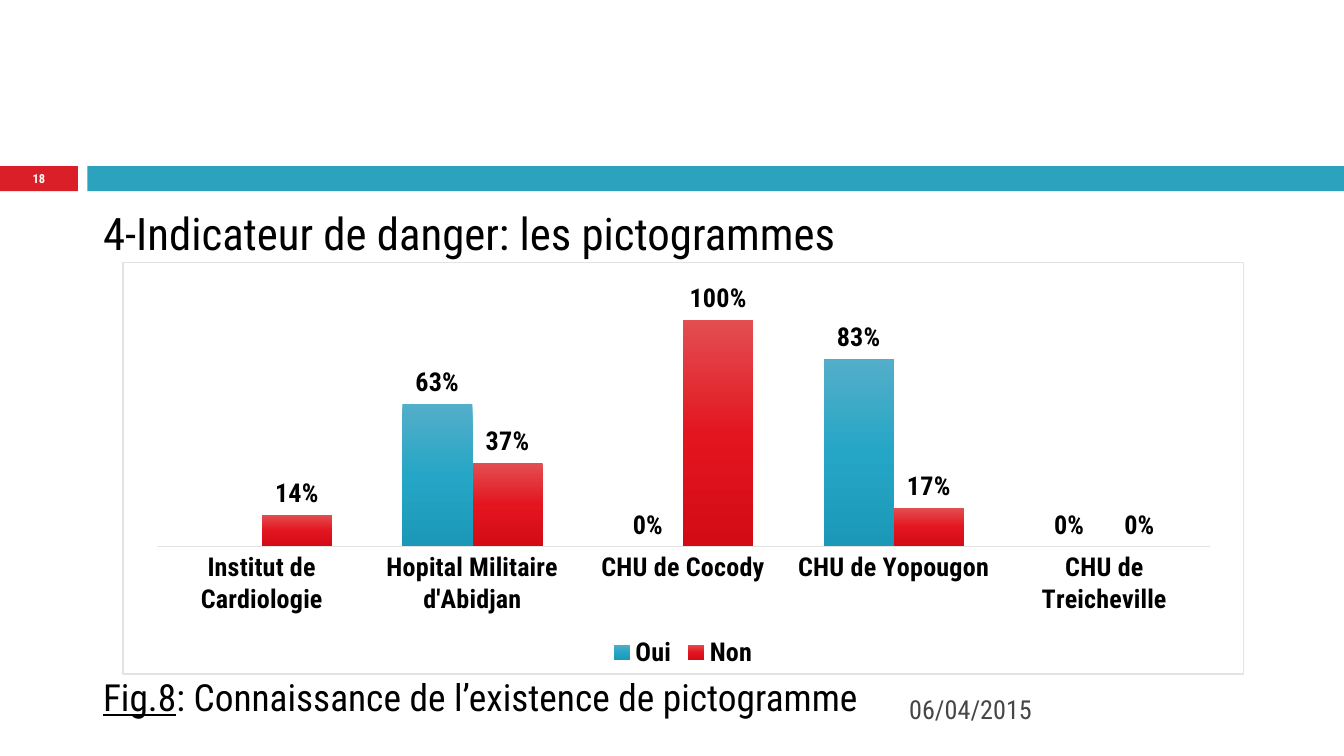
import copy

import lxml.etree
import pptx
import pptx.chart.data
import pptx.dml.color
import pptx.enum.chart
import pptx.enum.shapes
import pptx.enum.text
import pptx.oxml
import pptx.oxml.ns
import pptx.util

Pt = pptx.util.Pt
qn = pptx.oxml.ns.qn
RGB = pptx.dml.color.RGBColor.from_string
ALIGN = pptx.enum.text.PP_ALIGN
ANCHOR = pptx.enum.text.MSO_ANCHOR

THEME = {
    "font": "Roboto Condensed",
    "red": "DA1F28", "blue": "2DA2BF", "black": "000000",
    "white": "FFFFFF", "grey": "464646", "border": "E3E3E3",
    "yes": ["53AEC9", "26A6C6", "1B98B7"],
    "no": ["E34E51", "E31620", "D20B15"],
    "heading": 24, "caption": 20, "small": 14, "number": 6.7,
}


def add_run(paragraph, text, size, color, bold=False, underline=False):
    run = paragraph.add_run()
    run.text = text
    run.font.name = THEME["font"]
    run.font.size = Pt(size)
    run.font.color.rgb = RGB(color)
    run.font.bold = bold
    run.font.underline = underline


presentation = pptx.Presentation()
presentation.slide_width = Pt(720)
presentation.slide_height = Pt(405)
slide = presentation.slides.add_slide(presentation.slide_layouts[1])
title = slide.shapes.title._element
title.getparent().remove(title)

# Header band
for left, width, color in [(0, 41.76, "red"), (46.8, 673.2, "blue")]:
    band = slide.shapes.add_shape(
        pptx.enum.shapes.MSO_SHAPE.RECTANGLE, Pt(left), Pt(89), Pt(width), Pt(13.5))
    band.shadow.inherit = False
    band.fill.solid()
    band.fill.fore_color.rgb = RGB(THEME[color])
    band.line.fill.background()

# Date and slide number
for text, box, size, color, bold, alignment in [
    ("06/04/2015", (480, 369, 210, 21.6), "small", "grey", False, ALIGN.LEFT),
    ("18", (0, 88.6, 41.76, 14.4), "number", "white", True, ALIGN.CENTER),
]:
    text_box = slide.shapes.add_textbox(*[Pt(length) for length in box])
    frame = text_box.text_frame
    frame.word_wrap = True
    frame.vertical_anchor = ANCHOR.MIDDLE
    frame.margin_top = frame.margin_bottom = 0
    paragraph = frame.paragraphs[0]
    paragraph.alignment = alignment
    add_run(paragraph, text, THEME[size], THEME[color], bold)

# Heading above the chart and caption below it
body = slide.placeholders[1]
body.left, body.top, body.width, body.height = Pt(48), Pt(106.56), Pt(642), Pt(284.4)
frame = body.text_frame
frame.auto_size = pptx.enum.text.MSO_AUTO_SIZE.NONE
frame.vertical_anchor = ANCHOR.TOP
heading = frame.paragraphs[0]
caption = frame.add_paragraph()
add_run(heading, "4-Indicateur de danger: les pictogrammes", THEME["heading"], THEME["black"])
add_run(caption, "Fig.8", THEME["caption"], THEME["black"], underline=True)
add_run(caption, ": Connaissance de l’existence de pictogramme", THEME["caption"], THEME["black"])
for paragraph, space_before in [(heading, 0), (caption, 222)]:
    paragraph.space_before = Pt(space_before)
    properties = paragraph._p.get_or_add_pPr()
    properties.set("marL", "0")
    properties.set("indent", "0")
    lxml.etree.SubElement(properties, qn("a:buNone"))

# Chart
data = pptx.chart.data.CategoryChartData(number_format="0%")
data.categories = ["Institut de Cardiologie", "Hopital Militaire d'Abidjan",
                   "CHU de Cocody", "CHU de Yopougon", "CHU de Treicheville"]
data.add_series("Oui", [None, 0.63, 0, 0.83, 0])
data.add_series("Non", [0.14, 0.37, 1, 0.17, 0])
chart = slide.shapes.add_chart(
    pptx.enum.chart.XL_CHART_TYPE.COLUMN_CLUSTERED,
    Pt(65.5), Pt(140.4), Pt(601), Pt(221), data).chart
chart.has_title = False
chart.font.name = THEME["font"]
chart.font.size = Pt(THEME["small"])
chart.font.bold = True
chart.font.color.rgb = RGB(THEME["black"])
chart.has_legend = True
chart.legend.position = pptx.enum.chart.XL_LEGEND_POSITION.BOTTOM
chart.legend.include_in_layout = False

category_axis = chart.category_axis
category_axis.major_tick_mark = pptx.enum.chart.XL_TICK_MARK.NONE
category_axis.format.line.color.rgb = RGB(THEME["border"])
category_axis.format.line.width = Pt(0.75)
value_axis = chart.value_axis
value_axis.minimum_scale = 0
value_axis.maximum_scale = 1.2
value_axis.has_major_gridlines = False
value_axis.visible = False

plot = chart.plots[0]
plot.gap_width = 100
plot.overlap = 0
plot.vary_by_categories = False
for series, colors in zip(plot.series, [THEME["yes"], THEME["no"]]):
    fill = series.format.fill
    fill.gradient()
    fill.gradient_angle = 270
    stop_list = series._element.find(".//" + qn("a:gsLst"))
    stop_list.insert(1, copy.deepcopy(stop_list[0]))
    for stop, color, position in zip(fill.gradient_stops, colors, [0, 0.5, 1]):
        stop.color.rgb = RGB(color)
        stop.position = position
    labels = series.data_labels
    labels.show_value = True
    labels.number_format = "0%"
    labels.number_format_is_linked = False
    labels.position = pptx.enum.chart.XL_LABEL_POSITION.OUTSIDE_END

# Chart frame and plot area position
namespaces = pptx.oxml.ns.nsdecls("c", "a")
chart_space = chart._chartSpace
chart_space.find(qn("c:chart")).addnext(pptx.oxml.parse_xml(
    f'<c:spPr {namespaces}><a:solidFill><a:srgbClr val="{THEME["white"]}"/></a:solidFill>'
    f'<a:ln w="{Pt(0.75)}"><a:solidFill><a:srgbClr val="{THEME["border"]}"/></a:solidFill></a:ln>'
    '</c:spPr>'))
plot_area = chart_space.find(".//" + qn("c:plotArea"))
old_layout = plot_area.find(qn("c:layout"))
if old_layout is not None:
    plot_area.remove(old_layout)
plot_area.insert(0, pptx.oxml.parse_xml(
    f'<c:layout {namespaces}><c:manualLayout><c:layoutTarget val="inner"/>'
    '<c:xMode val="edge"/><c:yMode val="edge"/><c:x val="0.03"/><c:y val="0.03"/>'
    '<c:w val="0.94"/><c:h val="0.66"/></c:manualLayout></c:layout>'))

presentation.save("out.pptx")
